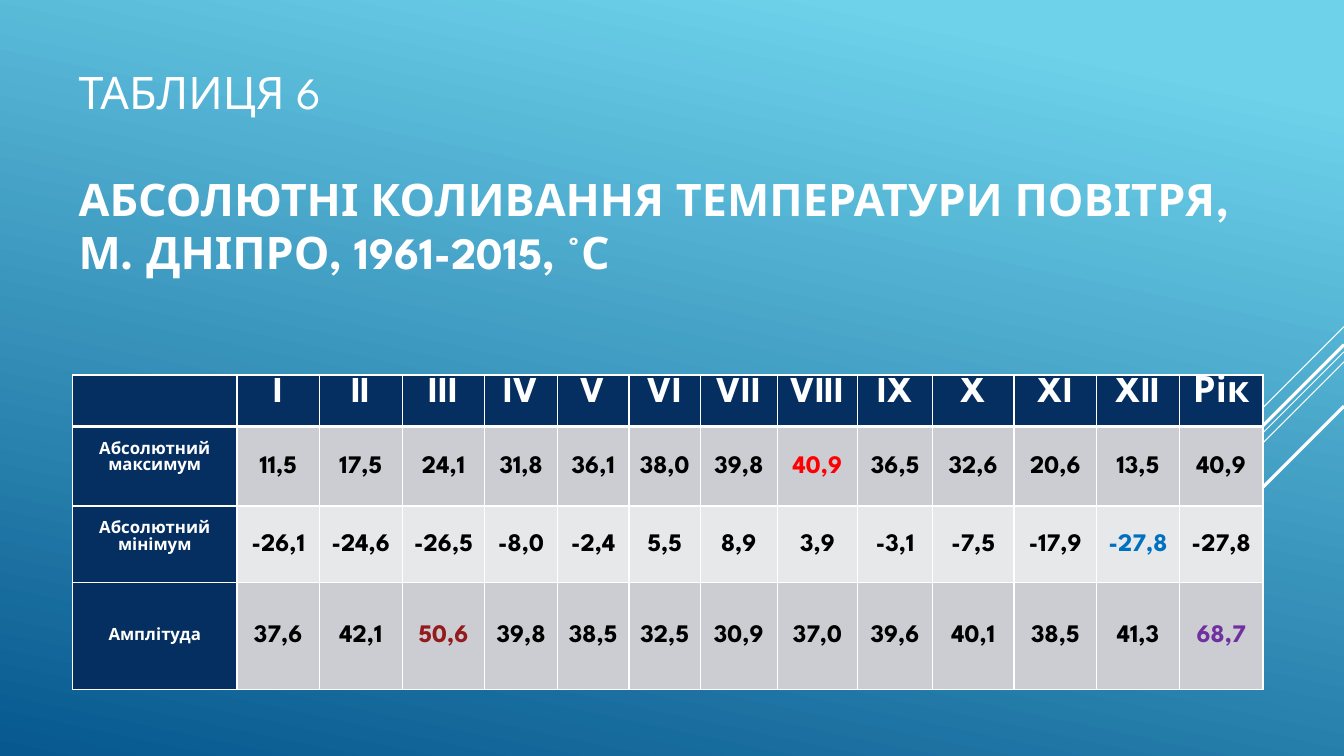
from lxml.etree import SubElement
from pptx import Presentation
from pptx.dml.color import RGBColor
from pptx.enum.shapes import MSO_CONNECTOR
from pptx.enum.text import MSO_ANCHOR, MSO_AUTO_SIZE, PP_ALIGN
from pptx.oxml.ns import qn
from pptx.util import Inches, Pt

FONT = "League Spartan"
WHITE = RGBColor(0xFF, 0xFF, 0xFF)
BLACK = RGBColor(0x00, 0x00, 0x00)
NAVY = RGBColor(0x05, 0x2F, 0x61)
SKY = RGBColor(0x6E, 0xD2, 0xEB)
OCEAN = RGBColor(0x06, 0x58, 0x8E)
GREY = RGBColor(0xCC, 0xCD, 0xD2)
PALE = RGBColor(0xE7, 0xE8, 0xEA)
RED = RGBColor(0xFF, 0x00, 0x00)
BLUE = RGBColor(0x00, 0x70, 0xC0)
MAROON = RGBColor(0x94, 0x1A, 0x1B)
PURPLE = RGBColor(0x70, 0x30, 0xA0)


def style_font(font, size, color, bold):
    font.name, font.size, font.bold = FONT, Pt(size), bold
    font.color.rgb = color


def add_border(cell, side, width):
    border = SubElement(cell._tc.get_or_add_tcPr(), qn(f"a:{side}"), w=str(Pt(width)))
    fill = SubElement(border, qn("a:solidFill"))
    SubElement(fill, qn("a:srgbClr"), val=str(WHITE))


prs = Presentation()
prs.slide_width, prs.slide_height = Inches(13.33), Inches(7.5)
slide = prs.slides.add_slide(prs.slide_layouts[5])

# Background gradient
background = slide.background.fill
background.gradient()
background.gradient_angle = 258
for stop, (position, color) in zip(background.gradient_stops, [(0.1, SKY), (1, OCEAN)]):
    stop.position = position
    stop.color.rgb = color

# Diagonal rays from the right edge: start height, run to the left, width
for top, run, width in [(3.24, 1, 0.75), (3.49, 3.26, 0.75), (3.59, 2.07, 0.75),
                        (3.42, 1.91, 2.25), (4.03, 1.39, 2.25)]:
    ray = slide.shapes.add_connector(
        MSO_CONNECTOR.STRAIGHT, Inches(13.33), Inches(top),
        Inches(13.33 - run), Inches(top + run))
    ray.line.color.rgb = WHITE
    ray.line.width = Pt(width)
    SubElement(ray._element.spPr, qn("a:effectLst"))

# Title
title = slide.shapes.title
title.left, title.top = Inches(0.68), Inches(0.45)
title.width, title.height = Inches(11.8), Inches(3.02)
heading = title.text_frame
heading.word_wrap = True
heading.auto_size = MSO_AUTO_SIZE.NONE
heading.vertical_anchor = MSO_ANCHOR.TOP
heading.margin_top = Inches(0.2)
heading.text = ("ТАБЛИЦЯ 6\n"
                "АБСОЛЮТНІ КОЛИВАННЯ ТЕМПЕРАТУРИ ПОВІТРЯ,\vМ. ДНІПРО, 1961-2015, °С")
for paragraph, bold, gap in zip(heading.paragraphs, [False, True], [0, 38]):
    paragraph.alignment = PP_ALIGN.LEFT
    paragraph.line_spacing = Pt(38)
    paragraph.space_before = Pt(gap)
    for run in paragraph.runs:
        style_font(run.font, 32, WHITE, bold)

# Temperature table
records = [
    ["", "I", "II", "III", "IV", "V", "VI", "VII", "VIII", "IX", "X", "XI", "XII", "Рік"],
    ["Абсолютний\nмаксимум", "11,5", "17,5", "24,1", "31,8", "36,1", "38,0", "39,8",
     "40,9", "36,5", "32,6", "20,6", "13,5", "40,9"],
    ["Абсолютний\nмінімум", "-26,1", "-24,6", "-26,5", "-8,0", "-2,4", "5,5", "8,9",
     "3,9", "-3,1", "-7,5", "-17,9", "-27,8", "-27,8"],
    ["Амплітуда", "37,6", "42,1", "50,6", "39,8", "38,5", "32,5", "30,9",
     "37,0", "39,6", "40,1", "38,5", "41,3", "68,7"],
]
month_widths = [0.82, 0.82, 0.82, 0.72, 0.71, 0.71, 0.76, 0.8, 0.74, 0.81, 0.82, 0.82, 0.83]
row_heights = [0.51, 0.79, 0.76, 1.06]
row_fills = [NAVY, GREY, PALE, GREY]
highlights = {(1, 8): RED, (2, 12): BLUE, (3, 3): MAROON, (3, 13): PURPLE}

temperatures = slide.shapes.add_table(
    4, 14, Inches(0.72), Inches(3.72), Inches(11.8), Inches(3.13)).table
for column, width in zip(temperatures.columns, [1.63] + month_widths):
    column.width = Inches(width)
for row, height in zip(temperatures.rows, row_heights):
    row.height = Inches(height)

for r, record in enumerate(records):
    for c, text in enumerate(record):
        cell = temperatures.cell(r, c)
        is_label = c == 0
        two_line_label = "\n" in text
        cell.text = text
        cell.margin_left = cell.margin_right = Inches(0.07)
        cell.margin_top = Inches(0.15 if two_line_label else 0)
        cell.margin_bottom = 0
        top_anchored = r == 0 or two_line_label
        cell.vertical_anchor = MSO_ANCHOR.TOP if top_anchored else MSO_ANCHOR.MIDDLE

        # Borders precede the fill in the cell properties
        for side in ("lnL", "lnR", "lnT", "lnB"):
            heavy = (r, side) in [(0, "lnB"), (1, "lnT")]
            add_border(cell, side, 3 if heavy else 1)
        cell.fill.solid()
        cell.fill.fore_color.rgb = NAVY if is_label else row_fills[r]

        size = 12 if is_label else 26 if r == 0 else 18
        color = WHITE if is_label or r == 0 else highlights.get((r, c), BLACK)
        for paragraph in cell.text_frame.paragraphs:
            paragraph.alignment = PP_ALIGN.CENTER
            paragraph.line_spacing = 1.07
            style_font(paragraph.font, size, color, True)
            for run in paragraph.runs:
                style_font(run.font, size, color, True)

prs.save("out.pptx")
